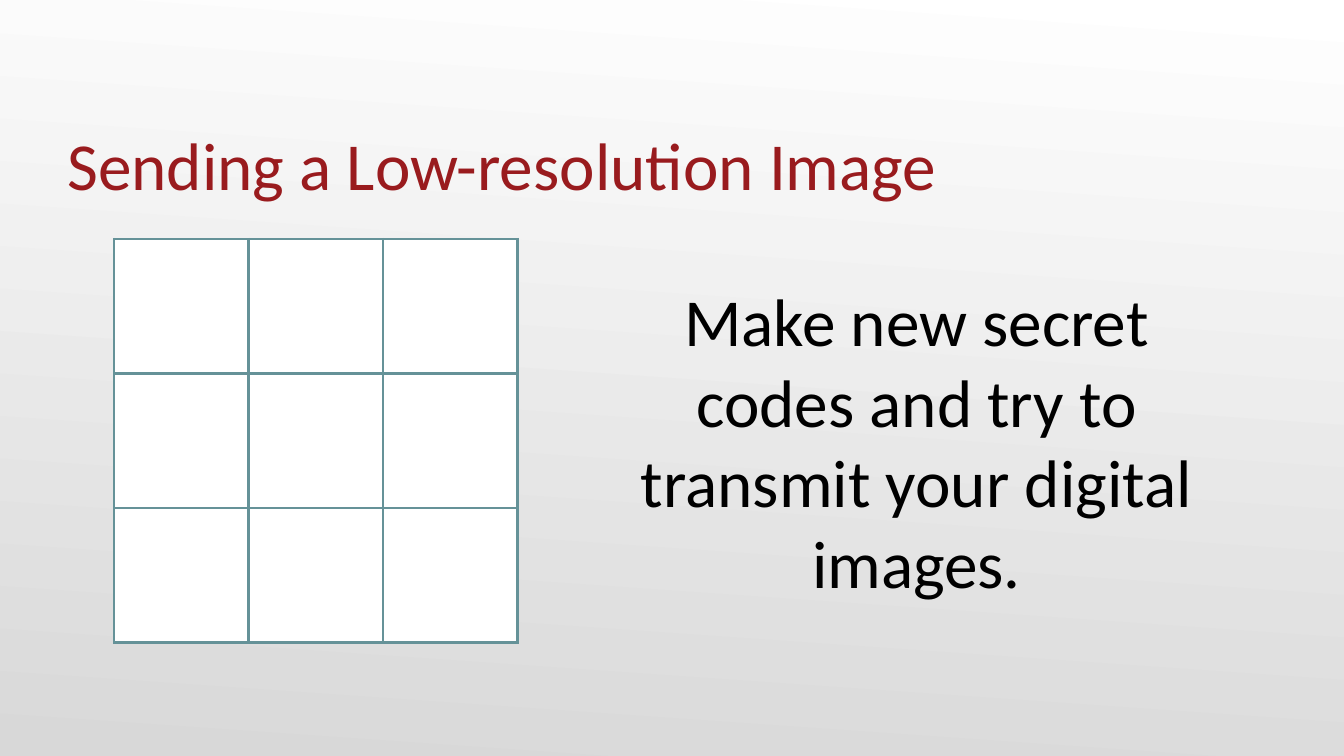
from lxml.etree import SubElement
from pptx import Presentation
from pptx.dml.color import RGBColor
from pptx.enum.text import MSO_ANCHOR as Anchor, PP_ALIGN as Align
from pptx.oxml.ns import qn
from pptx.util import Inches, Pt

TITLE = "Sending a Low-resolution Image"
TASK = "Make new secret codes and try to transmit your digital images."
COLORS = {
    "top": "FFFFFF",
    "bottom": "D8D8D8",
    "title": "991B1E",
    "text": "000000",
    "cell": "FFFFFF",
    "border": "659298",
}
SLIDE_WIDTH = 10
SLIDE_HEIGHT = SLIDE_WIDTH * 9 / 16
GRID_SIZE = 3
CELL_SIDE = Inches(1)
BORDER_WIDTH = Pt(1.5)


def rgb(name):
    return RGBColor.from_string(COLORS[name])


def place(shape, left, top, width, height):
    shape.left, shape.top = Inches(left), Inches(top)
    shape.width, shape.height = Inches(width), Inches(height)


def write(shape, text, color, align, anchor, left_inset, right_inset):
    frame = shape.text_frame
    frame.word_wrap = True
    frame.vertical_anchor = anchor
    frame.margin_left, frame.margin_right = Inches(left_inset), Inches(right_inset)
    para = frame.paragraphs[0]
    para.alignment = align
    span = para.add_run()
    span.text = text
    span.font.name = "Calibri"
    span.font.size = Pt(36)
    span.font.color.rgb = rgb(color)


def format_cell(cell):
    """Draw the four borders, then fill the cell."""
    properties = cell._tc.get_or_add_tcPr()
    for side in ("a:lnL", "a:lnR", "a:lnT", "a:lnB"):
        line = SubElement(properties, qn(side), w=str(BORDER_WIDTH))
        fill = SubElement(line, qn("a:solidFill"))
        SubElement(fill, qn("a:srgbClr"), val=COLORS["border"])
    cell.fill.solid()
    cell.fill.fore_color.rgb = rgb("cell")


def add_pixel_grid(slide, left, top):
    side = CELL_SIDE * GRID_SIZE
    frame = slide.shapes.add_table(
        GRID_SIZE, GRID_SIZE, Inches(left), Inches(top), side, side
    )
    table = frame.table
    table.first_row = table.horz_banding = False
    for cell in table.iter_cells():
        format_cell(cell)


def main():
    deck = Presentation()
    deck.slide_width, deck.slide_height = Inches(SLIDE_WIDTH), Inches(SLIDE_HEIGHT)
    slide = deck.slides.add_slide(deck.slide_layouts[5])

    background = slide.background.fill
    background.gradient()
    background.gradient_angle = 266
    for stop, name, position in zip(
        background.gradient_stops, ("top", "bottom"), (0, 1)
    ):
        stop.color.rgb = rgb(name)
        stop.position = position

    title = slide.shapes.title
    place(title, 0.5, 0.58, 9, 0.94)
    write(title, TITLE, "title", Align.LEFT, Anchor.BOTTOM, 0, 0)
    title.text_frame.margin_bottom = 0

    task_box = slide.shapes.add_textbox(0, 0, 0, 0)
    place(task_box, 4.49, 1.96, 4.66, 2.64)
    write(task_box, TASK, "text", Align.CENTER, Anchor.MIDDLE, 0.1, 0.1)

    add_pixel_grid(slide, 0.85, 1.78)
    deck.save("out.pptx")


if __name__ == "__main__":
    main()
